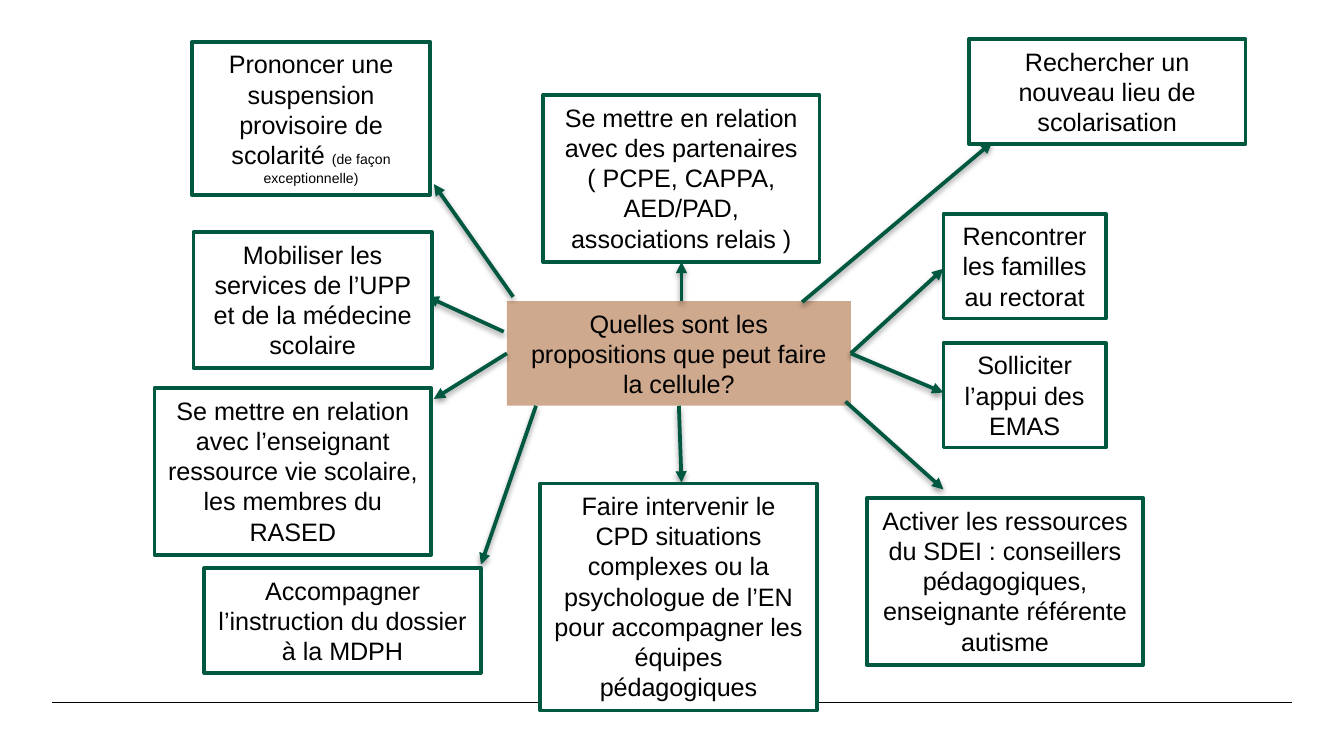
from dataclasses import dataclass

from lxml import etree
from pptx import Presentation
from pptx.dml.color import RGBColor
from pptx.enum.shapes import MSO_CONNECTOR
from pptx.enum.text import MSO_ANCHOR, MSO_AUTO_SIZE, PP_ALIGN
from pptx.oxml import parse_xml
from pptx.oxml.ns import nsdecls, qn
from pptx.util import Cm, Pt

STRAIGHT = MSO_CONNECTOR.STRAIGHT
CENTER = PP_ALIGN.CENTER
TITLE_ONLY = 5


@dataclass(frozen=True)
class Theme:
    font: str = "Arial"
    body: float = 13.5
    note: float = 7.5
    ink: RGBColor = RGBColor(0x00, 0x00, 0x00)
    paper: RGBColor = RGBColor(0xFF, 0xFF, 0xFF)
    green: RGBColor = RGBColor(0x00, 0x58, 0x41)
    sand: RGBColor = RGBColor(0xCF, 0xA9, 0x8D)
    border: float = 2
    rule: float = 0.8


@dataclass(frozen=True)
class Proposal:
    """A proposal box and the arrow that leads to it, in centimetres."""
    box: tuple[float, float, float, float]
    start: tuple[float, float]
    end: tuple[float, float]
    lines: tuple[str, ...]
    note: str = ""


THEME = Theme()
# Every box keeps its given height
FRAME = {
    "word_wrap": True,
    "auto_size": MSO_AUTO_SIZE.NONE,
    "vertical_anchor": MSO_ANCHOR.TOP,
    "margin_left": Cm(0.25),
    "margin_right": Cm(0.25),
    "margin_top": Cm(0.13),
    "margin_bottom": Cm(0.13),
}

# Box sizes and the side points of the question shared by two arrows
WIDE, MEDIUM, NARROW = 5.23, 4.5, 3.07
THREE_LINES, FIVE_LINES = 1.98, 3.15
QUESTION_BOX = (9.58, 5.69, 6.5, THREE_LINES)
LEFT_MID, RIGHT_MID = (9.58, 6.68), (16.08, 6.68)

QUESTION = "Quelles sont les propositions que peut faire la cellule?"
PROPOSALS = [
    Proposal((10.26, 1.8, WIDE, FIVE_LINES), (12.88, 5.69), (12.88, 4.95),
             ("Se mettre en relation avec des partenaires",
              "( PCPE, CAPPA, AED/PAD, associations relais )")),
    Proposal((18.31, 0.74, WIDE, THREE_LINES), (15.16, 5.71), (18.75, 2.69),
             ("Rechercher un nouveau lieu de scolarisation",)),
    Proposal((17.83, 4.04, NARROW, THREE_LINES), RIGHT_MID, (17.83, 5.08),
             ("Rencontrer les familles au rectorat",)),
    Proposal((17.83, 6.48, NARROW, THREE_LINES), RIGHT_MID, (17.83, 7.42),
             ("Solliciter l’appui des EMAS",)),
    Proposal((16.38, 9.42, WIDE, FIVE_LINES), (15.98, 7.59), (17.83, 9.25),
             ("Activer les ressources du SDEI : conseillers pédagogiques, "
              "enseignante référente autisme",)),
    Proposal((10.21, 9.14, WIDE, 4.29), (12.83, 7.67), (12.88, 9.12),
             ("Faire intervenir le CPD situations complexes ou la "
              "psychologue de l’EN",
              "pour accompagner les équipes pédagogiques")),
    Proposal((3.86, 10.74, WIDE, THREE_LINES), (10.13, 7.67), (9.09, 10.67),
             ("Accompagner l’instruction du dossier à la MDPH",)),
    Proposal((2.92, 7.34, WIDE, FIVE_LINES), LEFT_MID, (8.2, 7.54),
             ("Se mettre en relation avec l’enseignant ressource vie "
              "scolaire, les membres du RASED",)),
    Proposal((3.66, 4.39, MEDIUM, 2.57), (9.52, 6.27), (8.08, 5.61),
             ("Mobiliser les services de l’UPP et de la médecine scolaire",)),
    Proposal((3.63, 0.79, MEDIUM, 2.9), (9.7, 5.61), (8.2, 3.48),
             ("Prononcer une suspension provisoire de scolarité ",),
             "(de façon exceptionnelle)"),
]


def add_run(p, text: str, size: float) -> None:
    r = p.add_run()
    r.text = text
    for name, value in {"name": THEME.font, "size": Pt(size)}.items():
        setattr(r.font, name, value)
    r.font.color.rgb = THEME.ink


def write(sp, lines: tuple[str, ...], note: str = "") -> None:
    tf = sp.text_frame
    for name, value in FRAME.items():
        setattr(tf, name, value)
    for i, line in enumerate(lines):
        p = tf.add_paragraph() if i else tf.paragraphs[0]
        p.alignment = CENTER
        add_run(p, line, THEME.body)
    if note:
        add_run(p, note, THEME.note)


def fill(sp, color: RGBColor) -> None:
    sp.fill.solid()
    sp.fill.fore_color.rgb = color


def add_line(s, start: tuple[float, float], end: tuple[float, float],
             color: RGBColor, width: float):
    """Draw a straight line without a shadow."""
    line = s.shapes.add_connector(STRAIGHT, *map(Cm, start + end))
    line.line.color.rgb = color
    line.line.width = Pt(width)
    etree.SubElement(line._element.spPr, qn("a:effectLst"))
    return line


def add_arrow(s, start: tuple[float, float], end: tuple[float, float]) -> None:
    """Draw a line with a triangular head and a soft shadow below it."""
    arrow = add_line(s, start, end, THEME.green, THEME.border)
    spPr = arrow._element.spPr
    etree.SubElement(spPr.find(qn("a:ln")), qn("a:tailEnd"), type="triangle")
    spPr.find(qn("a:effectLst")).append(parse_xml(
        f'<a:outerShdw {nsdecls("a")} blurRad="{Pt(3.1)}" dist="{Pt(1.6)}" '
        f'dir="5400000" rotWithShape="0"><a:srgbClr val="{THEME.ink}">'
        '<a:alpha val="38000"/></a:srgbClr></a:outerShdw>'))


def add_proposal(s, item: Proposal) -> None:
    add_arrow(s, item.start, item.end)
    sp = s.shapes.add_textbox(*map(Cm, item.box))
    fill(sp, THEME.paper)
    sp.line.color.rgb = THEME.green
    sp.line.width = Pt(THEME.border)
    write(sp, item.lines, item.note)


def main() -> None:
    prs = Presentation()
    prs.slide_width, prs.slide_height = Cm(25.4), Cm(14.29)
    s = prs.slides.add_slide(prs.slide_layouts[TITLE_ONLY])

    # Central question
    title = s.shapes.title
    sides = ("left", "top", "width", "height")
    for name, value in zip(sides, QUESTION_BOX):
        setattr(title, name, Cm(value))
    fill(title, THEME.sand)
    write(title, (QUESTION,))

    # Footer rule
    add_line(s, (0.99, 13.28), (24.41, 13.28), THEME.ink, THEME.rule)

    # Proposals around the question
    for item in PROPOSALS:
        add_proposal(s, item)

    prs.save("out.pptx")


if __name__ == "__main__":
    main()
